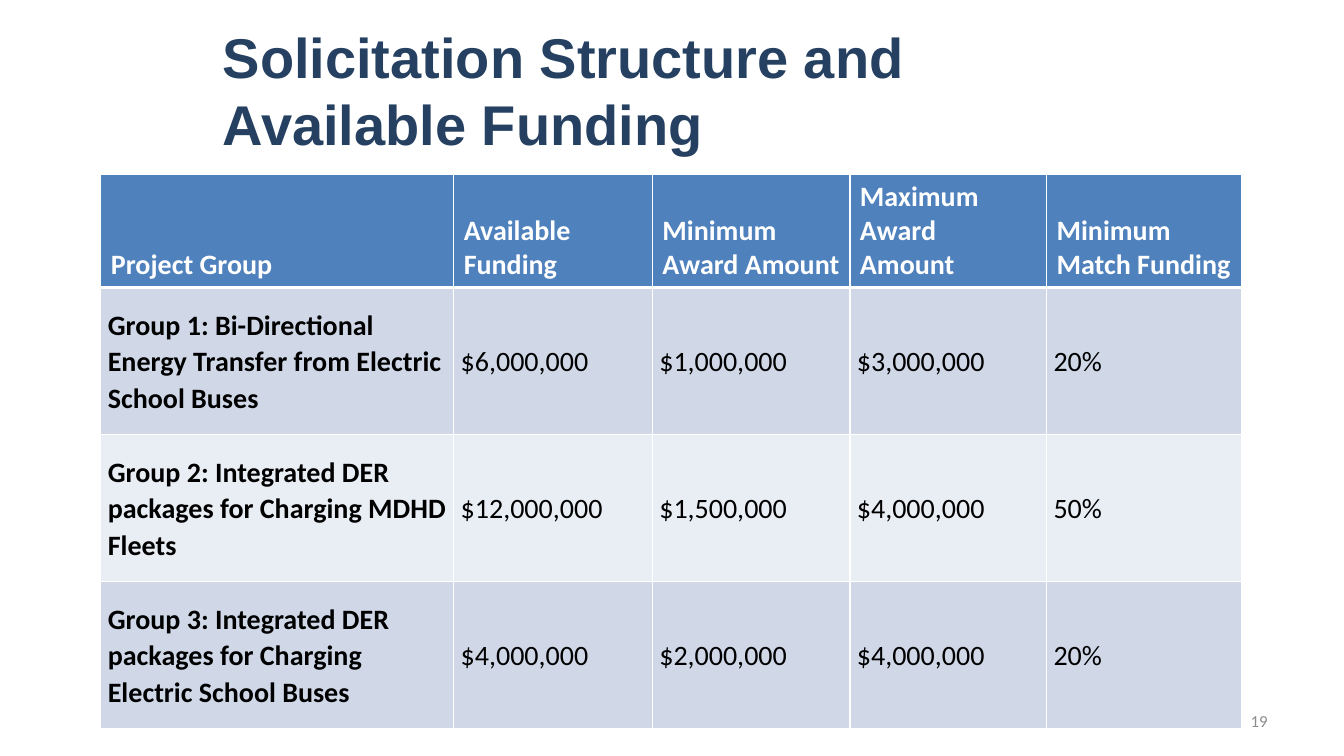
import pptx
import pptx.dml.color
import pptx.enum.text
import pptx.oxml
import pptx.oxml.ns
import pptx.util

Inches = pptx.util.Inches
Pt = pptx.util.Pt
Anchor = pptx.enum.text.MSO_ANCHOR
Align = pptx.enum.text.PP_ALIGN

COLUMN_WIDTHS = [3.5, 1.97, 1.96, 1.95, 1.93]
ROW_HEIGHTS = [1.03, 1.46, 1.46, 1.46]
FUNDING_ROWS = [
    ["Project Group", "Available Funding", "Minimum Award Amount",
     "Maximum Award Amount", "Minimum Match Funding"],
    ["Group 1: Bi-Directional Energy Transfer from Electric School Buses",
     "$6,000,000", "$1,000,000", "$3,000,000", "20%"],
    ["Group 2: Integrated DER packages for Charging MDHD Fleets",
     "$12,000,000", "$1,500,000", "$4,000,000", "50%"],
    ["Group 3: Integrated DER packages for Charging Electric School Buses",
     "$4,000,000", "$2,000,000", "$4,000,000", "20%"],
]


def color(value):
    return pptx.dml.color.RGBColor.from_string(value)


def write(frame, text, size=20, font="Calibri", fill="000000", bold=False,
          align=Align.LEFT, spacing=None):
    frame.word_wrap = True
    paragraph = frame.paragraphs[0]
    paragraph.alignment = align
    paragraph.line_spacing = spacing
    for index, line in enumerate(text.split("\n")):
        if index:
            paragraph.add_line_break()
        run = paragraph.add_run()
        run.text = line
        run.font.size = Pt(size)
        run.font.name = font
        run.font.bold = bold
        run.font.color.rgb = color(fill)


class FundingSlide:
    """Hold the colours and the current slide, and add its elements."""

    heading = "254061"
    header = "4F81BD"
    bands = ["D0D8E8", "E9EDF4"]
    white = "FFFFFF"
    muted = "8C8C8C"

    def __init__(self, presentation):
        self.slide = presentation.slides.add_slide(presentation.slide_layouts[5])

    def title(self, text, left, top, width, height):
        shape = self.slide.shapes.title
        shape.left, shape.top = Inches(left), Inches(top)
        shape.width, shape.height = Inches(width), Inches(height)
        frame = shape.text_frame
        frame.auto_size = pptx.enum.text.MSO_AUTO_SIZE.NONE
        frame.vertical_anchor = Anchor.MIDDLE
        write(frame, text, size=40, font="Arial", fill=self.heading, bold=True,
              spacing=Pt(48))

    def page_number(self, text, left, top, width, height):
        shape = self.slide.shapes.add_textbox(
            Inches(left), Inches(top), Inches(width), Inches(height))
        shape.text_frame.vertical_anchor = Anchor.MIDDLE
        write(shape.text_frame, text, size=12, fill=self.muted, align=Align.RIGHT)

    def borders(self, cell, row):
        properties = cell._tc.get_or_add_tcPr()
        widths = {"L": 1, "R": 1, "T": 3 if row == 1 else 1, "B": 3 if row == 0 else 1}
        for side, width in widths.items():
            properties.append(pptx.oxml.parse_xml(
                f'<a:ln{side} {pptx.oxml.ns.nsdecls("a")} w="{Pt(width)}"><a:solidFill>'
                f'<a:srgbClr val="{self.white}"/></a:solidFill></a:ln{side}>'))

    def cell(self, cell, text, row, column):
        is_header = row == 0
        is_group = column == 0
        self.borders(cell, row)
        cell.fill.solid()
        cell.fill.fore_color.rgb = color(
            self.header if is_header else self.bands[(row - 1) % 2])
        cell.vertical_anchor = Anchor.BOTTOM if is_header else Anchor.MIDDLE
        if is_header:
            side, top, bottom = 0.1, 0.4 if is_group else 0.05, 0.05
        else:
            side, top, bottom = 0.07, 0.1 * is_group, 0.1 * is_group
        cell.margin_left = cell.margin_right = Inches(side)
        cell.margin_top, cell.margin_bottom = Inches(top), Inches(bottom)
        write(cell.text_frame, text, fill=self.white if is_header else "000000",
              bold=is_header or is_group, spacing=None if is_header else 1.07)

    def table(self, rows, left, top):
        table = self.slide.shapes.add_table(
            len(rows), len(COLUMN_WIDTHS), Inches(left), Inches(top),
            Inches(sum(COLUMN_WIDTHS)), Inches(sum(ROW_HEIGHTS))).table
        for column, width in zip(table.columns, COLUMN_WIDTHS):
            column.width = Inches(width)
        for row, height in zip(table.rows, ROW_HEIGHTS):
            row.height = Inches(height)
        for row, texts in enumerate(rows):
            for column, text in enumerate(texts):
                self.cell(table.cell(row, column), text, row, column)


def main():
    presentation = pptx.Presentation()
    presentation.slide_width = Inches(13.33)
    presentation.slide_height = Inches(7.5)
    funding = FundingSlide(presentation)
    funding.title("Solicitation Structure and \nAvailable Funding", 2.11, 0.43, 10.69, 0.92)
    funding.table(FUNDING_ROWS, 1, 1.73)
    funding.page_number("19", 9.56, 6.95, 3.11, 0.4)
    presentation.save("out.pptx")


if __name__ == "__main__":
    main()
